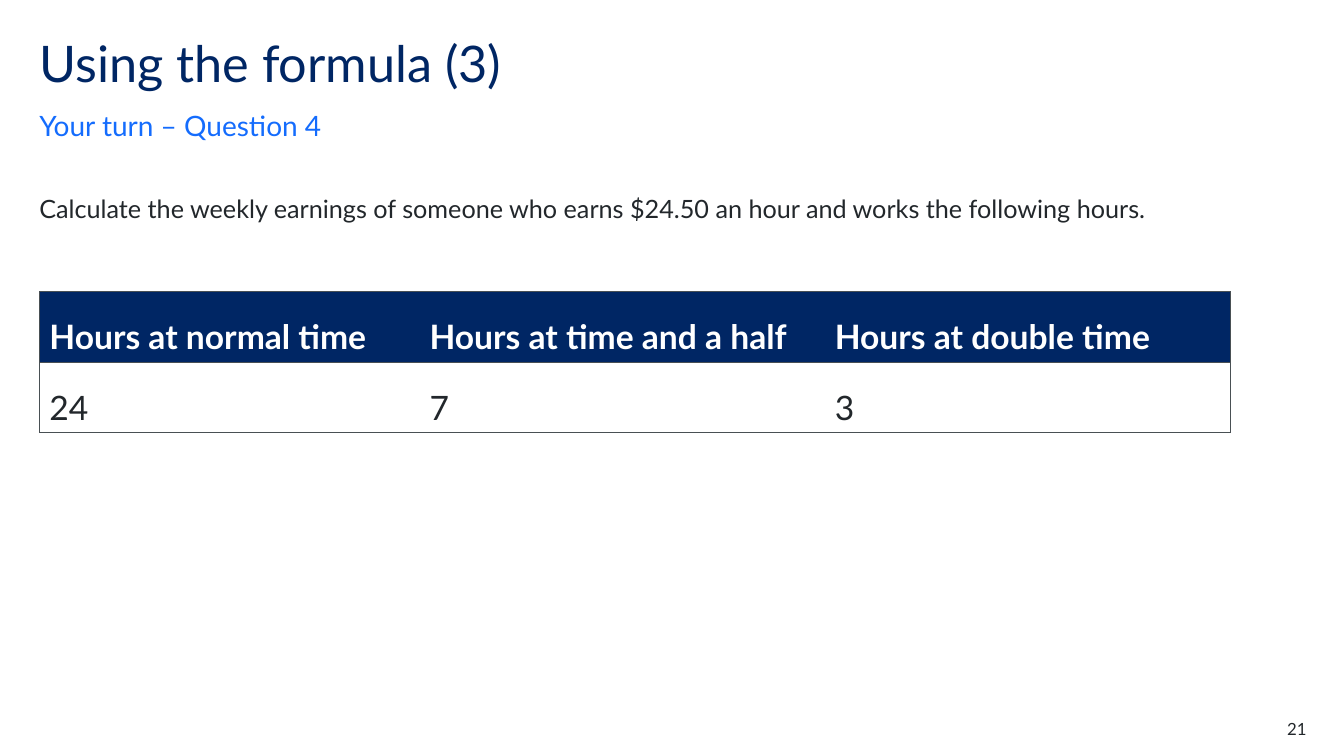
from lxml.etree import SubElement
from pptx import Presentation
from pptx.dml.color import RGBColor
from pptx.enum.text import MSO_ANCHOR, MSO_AUTO_SIZE, PP_ALIGN
from pptx.oxml.ns import qn
from pptx.util import Emu, Pt

PX = 9144  # 100 px to the inch
NAVY, BLUE, INK, GRID, WHITE = "002664", "146CFD", "22272B", "495054", "FFFFFF"
MARGINS = ("margin_left", "margin_top", "margin_right", "margin_bottom")
HOURS = [
    ["Hours at normal time", "Hours at time and a half", "Hours at double time"],
    ["24", "7", "3"],
]


def px(length):
    return Emu(length * PX)


def colour(value):
    return RGBColor.from_string(value)


def set_all(target, values):
    for name, value in values.items():
        setattr(target, name, value)


def write(frame, text, size, hue, bold=False, **paragraph_format):
    para = frame.paragraphs[0]
    set_all(para, paragraph_format)
    span = para.add_run()
    span.text = text
    set_all(span.font, {"name": "Lato", "size": Pt(size), "bold": bold})
    span.font.color.rgb = colour(hue)


def prepare_frame(frame, anchor=MSO_ANCHOR.TOP):
    set_all(frame, dict.fromkeys(MARGINS, 0))
    set_all(frame, {"word_wrap": True, "auto_size": MSO_AUTO_SIZE.NONE,
                    "vertical_anchor": anchor})


def add_title(page, box, text):
    title = page.shapes.title
    set_all(title, dict(zip(("left", "top", "width", "height"), map(px, box))))
    prepare_frame(title.text_frame)
    write(title.text_frame, text, 36, NAVY, alignment=PP_ALIGN.LEFT, line_spacing=0.9)


def add_text(page, box, text, size, hue, anchor=MSO_ANCHOR.TOP, **paragraph_format):
    frame = page.shapes.add_textbox(*map(px, box)).text_frame
    prepare_frame(frame, anchor)
    write(frame, text, size, hue, **paragraph_format)


def set_borders(cell, sides):
    """Draw the named sides of a cell and clear the others."""
    properties = cell._tc.get_or_add_tcPr()
    for position, side in enumerate("LRTB"):
        line = SubElement(properties, qn(f"a:ln{side}"), w=str(Pt(0.5)))
        properties.insert(position, line)
        if side in sides:
            fill = SubElement(line, qn("a:solidFill"))
            SubElement(fill, qn("a:srgbClr"), val=GRID)
        else:
            SubElement(line, qn("a:noFill"))


def add_hours_table(page, box, widths, rows):
    table = page.shapes.add_table(len(rows), len(widths), *map(px, box)).table
    set_all(table, {"first_row": False, "horz_banding": False})
    for column, width in zip(table.columns, widths):
        column.width = px(width)
    for row_index, row in enumerate(rows):
        header = row_index == 0
        table.rows[row_index].height = px(box[3] // len(rows))
        for column_index, text in enumerate(row):
            cell = table.cell(row_index, column_index)
            cell.vertical_anchor = MSO_ANCHOR.MIDDLE
            if header:
                cell.fill.solid()
                cell.fill.fore_color.rgb = colour(NAVY)
            else:
                cell.fill.background()
            write(cell.text_frame, text, 24, WHITE if header else INK,
                  bold=header, line_spacing=1.5)
            # Outer frame and the rule between the rows
            sides = "TB"
            if column_index == 0:
                sides += "L"
            if column_index == len(widths) - 1:
                sides += "R"
            set_borders(cell, sides)


def build_question(deck):
    page = deck.slides.add_slide(deck.slide_layouts[5])
    # Heading
    add_title(page, (39, 39, 1102, 60), "Using the formula (3)")
    add_text(page, (39, 107, 1102, 34), "Your turn – Question 4", 20, BLUE,
             MSO_ANCHOR.BOTTOM, space_after=Pt(12))
    # Question
    add_text(page, (39, 177, 1256, 104),
             "Calculate the weekly earnings of someone who earns $24.50 an hour "
             "and works the following hours.",
             18, INK, line_spacing=1.5, space_after=Pt(12))
    add_hours_table(page, (39, 289, 1181, 140), (377, 402, 402), HOURS)
    # Page number
    add_text(page, (1217, 713, 79, 20), "21", 12, INK, alignment=PP_ALIGN.RIGHT)


def main():
    deck = Presentation()
    set_all(deck, {"slide_width": px(1333), "slide_height": px(750)})
    build_question(deck)
    deck.save("out.pptx")


if __name__ == "__main__":
    main()
